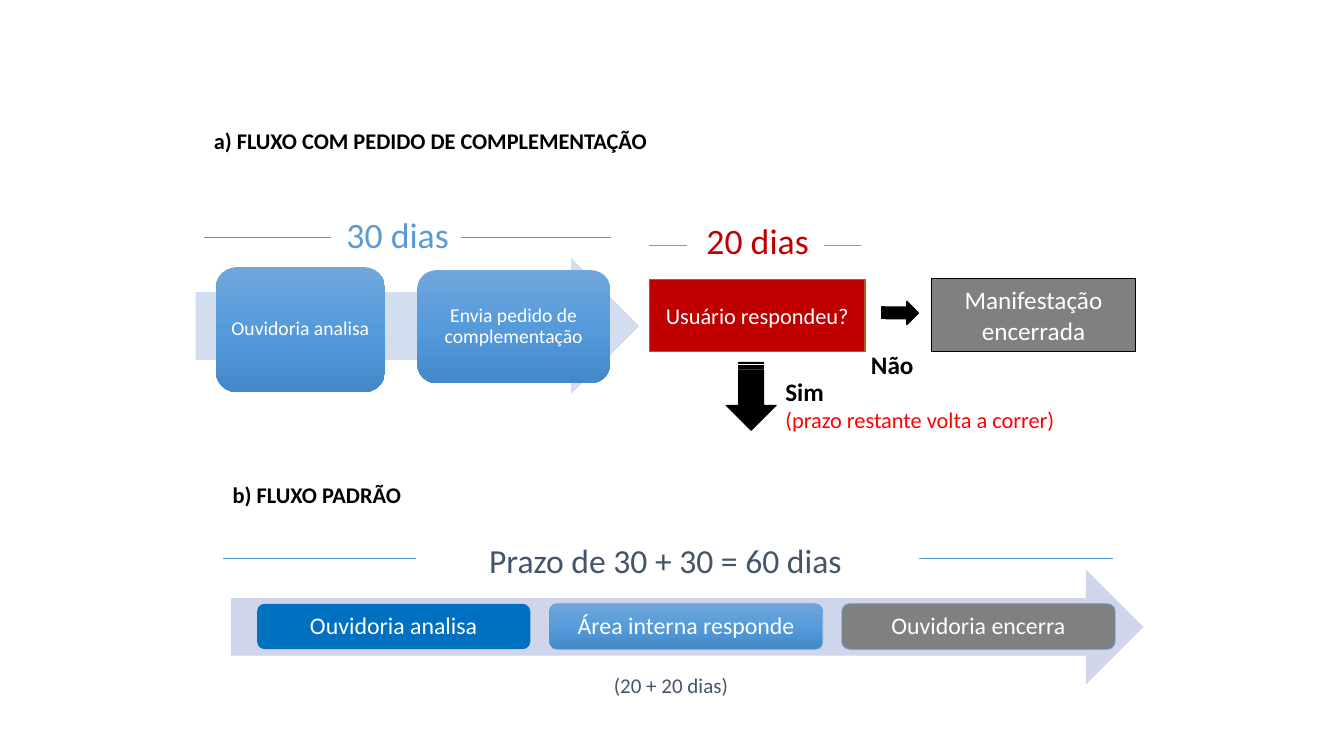
"""Build a slide comparing the extension-request flow with the standard flow."""
from copy import deepcopy

from lxml import etree
from pptx import Presentation
from pptx.dml.color import RGBColor
from pptx.enum.shapes import MSO_CONNECTOR, MSO_SHAPE
from pptx.enum.text import MSO_ANCHOR, MSO_AUTO_SIZE, PP_ALIGN
from pptx.oxml.ns import qn
from pptx.util import Inches, Pt

LEFT, CENTER = PP_ALIGN.LEFT, PP_ALIGN.CENTER
TOP, MIDDLE = MSO_ANCHOR.TOP, MSO_ANCHOR.MIDDLE
NO_FIT = MSO_AUTO_SIZE.NONE
STRAIGHT = MSO_CONNECTOR.STRAIGHT
RECTANGLE, ROUNDED = MSO_SHAPE.RECTANGLE, MSO_SHAPE.ROUNDED_RECTANGLE
ARROW, STRIPED = MSO_SHAPE.RIGHT_ARROW, MSO_SHAPE.STRIPED_RIGHT_ARROW

THEME = {
    "font": "Calibri",
    "white": "FFFFFF", "black": "000000", "gray": "808080", "slate": "44546A",
    "blue": "5B9BD5", "strong blue": "0070C0", "dark red": "C00000",
    "red": "FF0000", "orange": "ED7D31", "brown": "AF5C24",
    "pale blue": "D2DEEF", "pale violet": "CFD5EA",
    "gradient": ("71A6DB", "559BDB", "448ACA"),
    "term": 25.5, "total": 24, "answer": 18, "bar": 17, "body": 16,
    "note": 15, "step": 14,
}

deck = Presentation()
deck.slide_width, deck.slide_height = Inches(13.33), Inches(7.5)
CELL = deck.slide_height / 75
page = deck.slides.add_slide(deck.slide_layouts[5])


def cells(*lengths):
    return [round(length * CELL) for length in lengths]


def write(box, lines, align=CENTER, anchor=TOP, side=0.7, edge=0.4, spacing=1.0):
    frame = box.text_frame
    side, edge = cells(side, edge)
    layout = {"word_wrap": True, "auto_size": NO_FIT, "vertical_anchor": anchor,
              "margin_left": side, "margin_right": side,
              "margin_top": edge, "margin_bottom": edge}
    for name, value in layout.items():
        setattr(frame, name, value)
    for index, (text, size, color, bold) in enumerate(lines):
        para = frame.add_paragraph() if index else frame.paragraphs[0]
        para.alignment, para.line_spacing = align, spacing
        span = para.add_run()
        span.text = text
        style = {"name": THEME["font"], "size": Pt(THEME[size]), "bold": bold}
        for name, value in style.items():
            setattr(span.font, name, value)
        span.font.color.rgb = RGBColor.from_string(THEME[color])


title = page.shapes.title
title.left, title.top, title.width, title.height = cells(20.2, 12.1, 55.9, 3.7)
write(title, [("a) FLUXO COM PEDIDO DE COMPLEMENTAÇÃO", "body", "black", True)],
      LEFT, side=1, edge=0.5)

BAR_STEP = 29
bars = [
    (ROUNDED, (25.5 + BAR_STEP * column, 59.9, 27.1, 4.5), fill, line, 0.5, 0,
     text, "bar", 0.9)
    for column, (text, fill, line) in enumerate([
        ("Ouvidoria analisa", "strong blue", None),
        ("Área interna responde", "gradient", "blue"),
        ("Ouvidoria encerra", "gray", "blue"),
    ])
]
shapes = [
    (ARROW, (22.9, 56.5, 90.5, 11.4), "pale violet", None, 0, 0, None, None, 1),
    *bars,
    (RECTANGLE, (92.4, 27.6, 20.2, 7.3), "gray", "black", 0.5, 0,
     "Manifestação encerrada", "answer", 1.0),
    (RECTANGLE, (64.4, 27.7, 21.4, 7.2), "dark red", "brown", 1, 0,
     "Usuário respondeu?", "body", 1.0),
    (STRIPED, (71.1, 36.8, 6.8, 5), "black", "black", 0.5, 90, None, None, 1),
    (STRIPED, (87.5, 29.9, 3.6, 2.3), "black", "black", 1, 0, None, None, 1),
    (ARROW, (19.4, 25.6, 44, 13.5), "pale blue", None, 0, 0, None, None, 1),
    (ROUNDED, (21.4, 26.5, 16.8, 12.4), "gradient", None, 0, 0,
     "Ouvidoria analisa", "step", 0.9),
    (ROUNDED, (41.4, 26.8, 19.1, 11.2), "gradient", None, 0, 0,
     "Envia pedido de complementação", "step", 0.9),
]
for kind, place, fill, line, weight, turn, text, size, spacing in shapes:
    box = page.shapes.add_shape(kind, *cells(*place))
    box.shadow.inherit = False
    box.rotation = turn
    if fill == "gradient":
        box.fill.gradient()
        box.fill.gradient_angle = 270
        stop_list = box._element.spPr.find(".//" + qn("a:gsLst"))
        stop_list.insert(1, deepcopy(stop_list[0]))
        for stop, color, position in zip(box.fill.gradient_stops, THEME[fill], (0, 0.5, 1)):
            stop.color.rgb = RGBColor.from_string(color)
            stop.position = position
    else:
        box.fill.solid()
        box.fill.fore_color.rgb = RGBColor.from_string(THEME[fill])
    if line:
        box.line.color.rgb = RGBColor.from_string(THEME[line])
        box.line.width = Pt(weight)
    else:
        box.line.fill.background()
    if text:
        write(box, [(text, size, "white", False)], anchor=MIDDLE, spacing=spacing)

captions = [
    ((22.5, 53.2, 87, 5), "Prazo de 30 + 30 = 60 dias", "total", "slate"),
    ((56.2, 66.3, 20.7, 3.3), "(20 + 20 dias)", "note", "slate"),
    ((64.8, 21.3, 20.7, 5), "20 dias", "term", "dark red"),
    ((29.1, 20.7, 20.7, 5), "30 dias", "term", "blue"),
]
for place, text, size, color in captions:
    box = page.shapes.add_textbox(*cells(*place))
    write(box, [(text, size, color, False)])

labels = [
    ((22.1, 47.2, 25.3, 3.7), [("b) FLUXO PADRÃO", "body", "black", True)]),
    ((85.4, 34.2, 8.3, 4), [("Não", "answer", "black", True)]),
    ((76.9, 36.8, 29.9, 6.7), [
        ("Sim", "answer", "black", True),
        ("(prazo restante volta a correr)", "body", "red", False)]),
]
for place, lines in labels:
    box = page.shapes.add_textbox(*cells(*place))
    write(box, lines, LEFT, side=1, edge=0.5)

rules = [
    (22.1, 41.3, 55.4, "blue"), (91.1, 110.4, 55.4, "blue"),
    (20.2, 32.8, 23.5, "blue"), (45.7, 60.6, 23.5, "blue"),
    (64.4, 68.1, 24.3, "orange"), (81.7, 85.4, 24.3, "orange"),
]
for start, end, row, color in rules:
    rule = page.shapes.add_connector(STRAIGHT, *cells(start, row, end, row))
    rule.line.color.rgb = RGBColor.from_string(THEME[color])
    rule.line.width = Pt(0.5)
    etree.SubElement(rule._element.spPr, qn("a:effectLst"))

deck.save("out.pptx")
